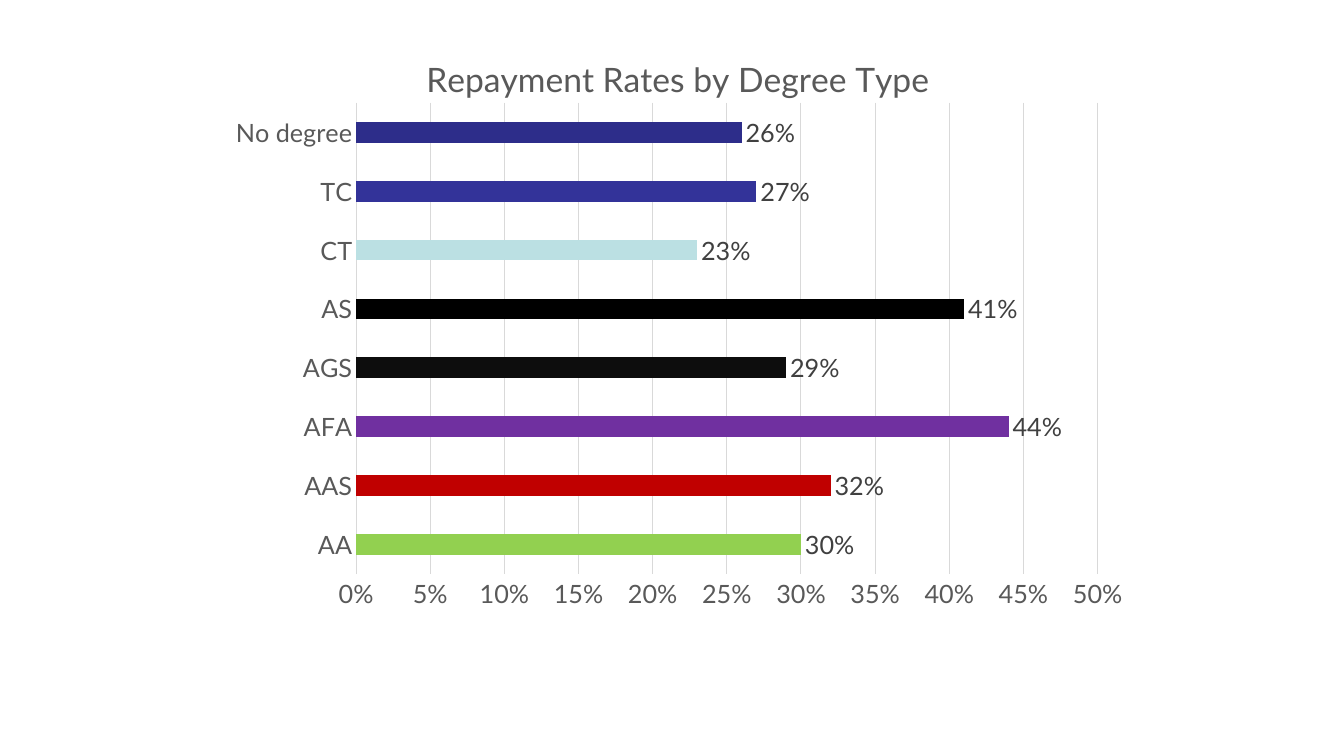
from lxml import etree
from pptx import Presentation
from pptx.chart.data import CategoryChartData
from pptx.dml.color import RGBColor
from pptx.enum.chart import XL_CHART_TYPE, XL_LABEL_POSITION, XL_TICK_MARK
from pptx.oxml.ns import qn
from pptx.util import Inches, Pt

BAR = XL_CHART_TYPE.BAR_CLUSTERED
OUTSIDE = XL_LABEL_POSITION.OUTSIDE_END
NO_TICK = XL_TICK_MARK.NONE
FONT = "Lato"
GREY, PALE = "595959", "D9D9D9"
WIDTH, HEIGHT = Inches(13.33), Inches(7.5)

RATES = [
    ("AA", 0.30, "92D050"),
    ("AAS", 0.32, "C00000"),
    ("AFA", 0.44, "7030A0"),
    ("AGS", 0.29, "0D0D0D"),
    ("AS", 0.41, "000000"),
    ("CT", 0.23, "BBE0E3"),
    ("TC", 0.27, "333399"),
    ("No degree", 0.26, "2D2D8A"),
]


def rgb(value):
    return RGBColor.from_string(value)


def set_font(font, size, color):
    font.name = FONT
    font.size = Pt(size)
    font.bold = False
    font.color.rgb = rgb(color)


def set_line(line):
    line.color.rgb = rgb(PALE)
    line.width = Pt(0.75)


def set_layout(parent, after, **shares):
    for old in parent.findall(qn("c:layout")):
        parent.remove(old)
    layout = etree.Element(qn("c:layout"))
    manual = etree.SubElement(layout, qn("c:manualLayout"))
    settings = {"xMode": "edge", "yMode": "edge", **shares}
    if "w" in shares:
        settings = {"layoutTarget": "inner", **settings}
    for name, value in settings.items():
        etree.SubElement(manual, qn(f"c:{name}")).set("val", str(value))
    if after is None:
        parent.insert(0, layout)
    else:
        after.addnext(layout)


def add_title(chart, text):
    title = chart.chart_title
    tf = title.text_frame
    tf.text = text
    set_font(tf.paragraphs[0].font, 24, GREY)
    title.include_in_layout = False
    element = chart.element.find(".//" + qn("c:title"))
    set_layout(element, element.find(qn("c:tx")), x=0.22, y=0.04)


def format_axes(chart):
    for axis in (chart.category_axis, chart.value_axis):
        axis.major_tick_mark = axis.minor_tick_mark = NO_TICK
        set_font(axis.tick_labels.font, 18, GREY)
    set_line(chart.category_axis.format.line)
    axis = chart.value_axis
    axis.minimum_scale, axis.maximum_scale, axis.major_unit = 0, 0.5, 0.05
    axis.format.line.fill.background()
    set_line(axis.major_gridlines.format.line)
    axis.tick_labels.number_format = "0%"
    axis.tick_labels.number_format_is_linked = False


def format_bars(plot):
    plot.gap_width = 182
    plot.vary_by_categories = False
    series = plot.series[0]
    series.invert_if_negative = False
    for i, (_, _, color) in enumerate(RATES):
        fill = series.points[i].format.fill
        fill.solid()
        fill.fore_color.rgb = rgb(color)
    labels = series.data_labels
    labels.show_value = True
    labels.number_format = "0%"
    labels.number_format_is_linked = False
    labels.position = OUTSIDE
    set_font(labels.font, 18, "404040")


def add_rates_chart(s):
    data = CategoryChartData(number_format="0%")
    data.categories = [name for name, _, _ in RATES]
    data.add_series("Series 1", [rate for _, rate, _ in RATES])
    x, y, w, h = Inches(2.17), Inches(0.25), Inches(9.08), Inches(5.92)
    chart = s.shapes.add_chart(BAR, x, y, w, h, data).chart
    set_font(chart.font, 10, "000000")
    chart.has_legend = False
    add_title(chart, "Repayment Rates by Degree Type")
    format_axes(chart)
    format_bars(chart.plots[0])
    plot_area = chart.element.find(".//" + qn("c:plotArea"))
    set_layout(plot_area, None, x=0.15, y=0.13, w=0.81, h=0.79)


def main():
    prs = Presentation()
    prs.slide_width, prs.slide_height = WIDTH, HEIGHT
    s = prs.slides.add_slide(prs.slide_layouts[6])
    add_rates_chart(s)
    prs.save("out.pptx")


if __name__ == "__main__":
    main()
